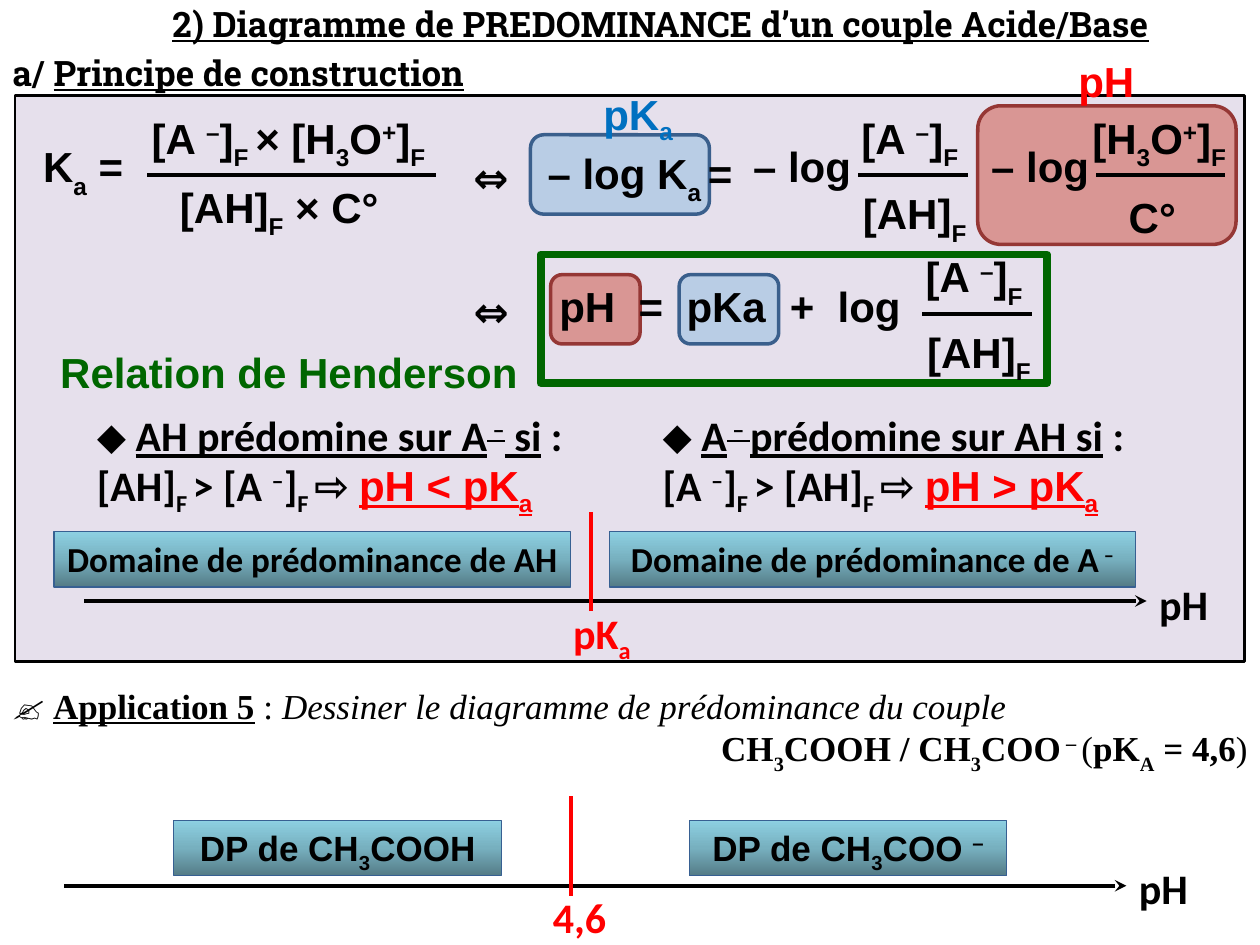
from copy import deepcopy
from typing import NamedTuple

from lxml.etree import SubElement
from pptx import Presentation
from pptx.dml.color import RGBColor
from pptx.enum.shapes import MSO_CONNECTOR, MSO_SHAPE
from pptx.enum.text import MSO_ANCHOR, MSO_AUTO_SIZE, PP_ALIGN
from pptx.oxml.ns import qn
from pptx.util import Inches, Pt

COLUMNS, ROWS = 100, 75
CELL = Inches(0.1)

BLACK = RGBColor(0x00, 0x00, 0x00)
RED = RGBColor(0xFF, 0x00, 0x00)
BLUE = RGBColor(0x00, 0x70, 0xC0)
GREEN = RGBColor(0x00, 0x66, 0x00)
NAVY = RGBColor(0x00, 0x20, 0x60)
LILAC = RGBColor(0xE6, 0xE0, 0xEC)
PALE_BLUE = RGBColor(0xB9, 0xCD, 0xE5)
PALE_BLUE_EDGE = RGBColor(0x3A, 0x5F, 0x8C)
ROSE = RGBColor(0xD9, 0x96, 0x94)
ROSE_EDGE = RGBColor(0x95, 0x37, 0x35)
LABEL_EDGE = RGBColor(0x37, 0x60, 0x92)
LABEL_STOPS = (
    (0, RGBColor(0x54, 0x7B, 0x86)),
    (0.5, RGBColor(0x77, 0xB0, 0xBF)),
    (1, RGBColor(0x8D, 0xD0, 0xE2)),
)

BASE_ION = "[A |^–|]|_F"
ACID = "[AH]|_F"
HYDRONIUM = "[H|_3|O|^+|]|_F"


class Area(NamedTuple):
    """Left, top, width and height in grid cells."""
    left: float
    top: float
    width: float
    height: float


class Panel(NamedTuple):
    """A filled and outlined shape."""
    kind: MSO_SHAPE
    area: Area
    fill: RGBColor | None
    edge: RGBColor
    weight: float


class Formula(NamedTuple):
    """A single-line text with its format."""
    text: str
    area: Area
    form: dict


class Span(NamedTuple):
    """Marked-up text with the format that differs from its box."""
    text: str
    form: dict


class Label(NamedTuple):
    """A predominance domain above the axis."""
    text: str
    left: float
    width: float


class Axis(NamedTuple):
    """A pH axis with its limit and its two domains."""
    left: float
    level: float
    limit: str
    limit_width: float
    label_rise: float
    font: str
    labels: tuple


def cells(*values: float) -> list[int]:
    """Turn grid cells into slide lengths."""
    return [round(value * CELL) for value in values]


def write_spans(para, text: str, *, size=24, font="Arial", color=BLACK, bold=True,
                italic=False, underline=False, drop=30) -> None:
    """Write pieces split by bars, where _ lowers and ^ raises a piece."""
    for piece in text.split("|"):
        span = para.add_run()
        shift = {"_": -drop, "^": 30}.get(piece[0], 0)
        span.text = piece[1:] if shift else piece
        span.font.size, span.font.name = Pt(size), font
        span.font.bold, span.font.italic, span.font.underline = bold, italic, underline
        span.font.color.rgb = color
        if shift:
            span.font._element.set("baseline", str(shift * 1000))


def fill_text(box, *paragraphs, align=PP_ALIGN.LEFT, wrap=False,
              anchor=MSO_ANCHOR.TOP, tabs=(), **form) -> None:
    """Fill a box with paragraphs, each a string or a tuple of spans."""
    frame = box.text_frame
    frame.word_wrap, frame.vertical_anchor = wrap, anchor
    frame.auto_size = MSO_AUTO_SIZE.SHAPE_TO_FIT_TEXT
    aligns = align if isinstance(align, tuple) else (align,) * len(paragraphs)
    for index, (content, side) in enumerate(zip(paragraphs, aligns)):
        para = frame.add_paragraph() if index else frame.paragraphs[0]
        para.alignment = side
        if tabs:
            stops = SubElement(para._p.get_or_add_pPr(), qn("a:tabLst"))
            for stop in cells(*tabs):
                SubElement(stops, qn("a:tab"), pos=str(stop), algn="l")
        spans = (Span(content, {}),) if isinstance(content, str) else content
        for span in spans:
            write_spans(para, span.text, **{**form, **span.form})


def add_text(page, area: Area, *paragraphs, **form) -> None:
    """Add a text box."""
    fill_text(page.shapes.add_textbox(*cells(*area)), *paragraphs, **form)


def add_panel(page, panel: Panel):
    """Add a preset shape."""
    box = page.shapes.add_shape(panel.kind, *cells(*panel.area))
    box.shadow.inherit = False
    if panel.fill is None:
        box.fill.background()
    else:
        box.fill.solid()
        box.fill.fore_color.rgb = panel.fill
    box.line.color.rgb, box.line.width = panel.edge, Pt(panel.weight)
    return box


def add_line(page, start: tuple, end: tuple, color=BLACK, arrow=False) -> None:
    """Add a straight line, with an arrowhead at its start on request."""
    line = page.shapes.add_connector(MSO_CONNECTOR.STRAIGHT, *cells(*start, *end))
    line.line.color.rgb, line.line.width = color, Pt(2.25)
    if arrow:
        SubElement(line.line._get_or_add_ln(), qn("a:headEnd"), type="stealth")
    SubElement(line._element.spPr, qn("a:effectLst"))


def add_label(page, area: Area, text: str, font: str) -> None:
    """Add a domain label with a vertical gradient."""
    box = add_panel(page, Panel(MSO_SHAPE.RECTANGLE, area, LILAC, LABEL_EDGE, 0.75))
    box.fill.gradient()
    box.fill.gradient_angle = 90
    first = box.fill.gradient_stops[0]._gs
    first.addnext(deepcopy(first))
    for stop, (position, color) in zip(box.fill.gradient_stops, LABEL_STOPS):
        stop.position, stop.color.rgb = position, color
    fill_text(box, text, align=PP_ALIGN.CENTER, wrap=True, size=20, font=font, drop=25)


def add_axis(page, axis: Axis) -> None:
    """Add a pH axis, its red limit and its domain labels."""
    left, level = axis.left, axis.level
    add_line(page, (left + 84.3, level), (left, level), arrow=True)
    add_line(page, (left + 40.2, level + 0.8), (left + 40.2, level - 7.1), RED)
    add_text(page, Area(left + 84.3, level - 2.3, 5.9, 5), "pH", font="Calibri")
    add_text(page, Area(left + 37.8, level, axis.limit_width, 5), axis.limit,
             font="Calibri", color=RED, drop=25)
    for label in axis.labels:
        area = Area(label.left, level - axis.label_rise, label.width, 4.4)
        add_label(page, area, label.text, axis.font)


def add_condition(page, area: Area, title: str, relation: str, result: str) -> None:
    """Add the condition under which one species predominates."""
    add_text(page, area,
             (Span("⬥ ", {"bold": False}), Span(title, {"underline": True}), Span(" :", {})),
             (Span(relation, {}), Span(" ", {"size": 20, "font": "Arial", "color": NAVY}),
              Span(result, {"font": "Arial", "color": RED, "underline": True})),
             font="Calibri", wrap=True, drop=25)


CENTERED = {"align": PP_ALIGN.CENTER}
HEADING = {"size": 20, "font": "Roboto Slab", "align": PP_ALIGN.JUSTIFY}
ARROW = {"font": "Calibri", "wrap": True}

PANELS = (
    Panel(MSO_SHAPE.RECTANGLE, Area(1.2, 7.6, 97.6, 44.9), LILAC, BLACK, 1.5),
    Panel(MSO_SHAPE.ROUNDED_RECTANGLE, Area(53.9, 21.8, 7.9, 5.5), PALE_BLUE, PALE_BLUE_EDGE, 2),
    Panel(MSO_SHAPE.ROUNDED_RECTANGLE, Area(43.7, 21.8, 7.1, 5.5), ROSE, ROSE_EDGE, 2),
    Panel(MSO_SHAPE.ROUNDED_RECTANGLE, Area(42.1, 10.7, 14.2, 6.3), PALE_BLUE, PALE_BLUE_EDGE, 2),
    Panel(MSO_SHAPE.ROUNDED_RECTANGLE, Area(77.6, 8.4, 20.5, 11), ROSE, ROSE_EDGE, 2),
    Panel(MSO_SHAPE.RECTANGLE, Area(42.9, 20.2, 40.2, 10.2), None, GREEN, 4.5),
)
FORMULAS = (
    Formula("2) Diagramme de PREDOMINANCE d’un couple Acide/Base",
            Area(12.7, -0.3, 87.5, 4.4), {**HEADING, "underline": True}),
    Formula("K|_a| =", Area(2.3, 10.7, 8.6, 5), CENTERED),
    Formula(f"[A |^–|]|_F |× {HYDRONIUM}", Area(10.6, 8.4, 24.6, 5), CENTERED),
    Formula(f"{ACID}| × C°", Area(13.3, 13.9, 17.8, 5), {}),
    Formula("⇔", Area(36.6, 11.5, 8.7, 5), ARROW),
    Formula("– log K|_a |=", Area(42.1, 11.2, 17.4, 5), CENTERED),
    Formula("– log", Area(58.7, 10.7, 9.9, 5), CENTERED),
    Formula("– log", Area(77.6, 10.7, 9.9, 5), CENTERED),
    Formula(HYDRONIUM, Area(85.4, 8.4, 13.2, 5), CENTERED),
    Formula("C°", Area(88.6, 14.7, 5.8, 5), {}),
    Formula("⇔", Area(36.6, 22.2, 7.1, 5), ARROW),
    Formula("pH\t=\tpKa\t+\tlog", Area(43.4, 21.8, 30.2, 5),
            {"wrap": True, "tabs": (6.3, 10.1, 18.3, 22.1)}),
    Formula("pH", Area(84.6, 3.9, 6.5, 5), {"color": RED}),
    Formula("pK|_a", Area(46.9, 6.5, 7.8, 5), {"color": BLUE, "drop": 25}),
    Formula("Relation de Henderson", Area(3.8, 27, 38.7, 5), {"color": GREEN}),
)
AXES = (
    Axis(6.7, 47.7, "pK|_a", 6.7, 5.5, "Calibri", (
        Label("Domaine de prédominance de AH", 4.3, 41),
        Label("Domaine de prédominance de A|^ –", 48.4, 41.7))),
    Axis(5.1, 70.3, "4,6", 6.3, 5.2, "Arial", (
        Label("DP de CH|_3|COOH", 13.8, 26),
        Label("DP de CH|_3|COO |^–", 54.7, 25.2))),
)


def main() -> None:
    """Build the slide and save it."""
    deck = Presentation()
    deck.slide_width, deck.slide_height = cells(COLUMNS, ROWS)
    page = deck.slides.add_slide(deck.slide_layouts[6])
    for panel in PANELS:
        add_panel(page, panel)
    for formula in FORMULAS:
        add_text(page, formula.area, formula.text, **formula.form)
    add_text(page, Area(0, 3.6, 42.5, 4.4),
             (Span("a/ ", {}), Span("Principe de construction", {"underline": True})), **HEADING)
    for left, top in ((67.3, 8.4), (72.4, 19.4)):
        add_text(page, Area(left, top, 9.8, 5), BASE_ION, **CENTERED)
        add_line(page, (left + 9.5, top + 5.5), (left + 0.8, top + 5.5))
        add_text(page, Area(left + 0.2, top + 6, 10.5, 5), ACID)
    for left, right in ((11.7, 34.6), (87, 97.2)):
        add_line(page, (right, 13.9), (left, 13.9))
    add_condition(page, Area(6.7, 32, 39.4, 9.1), "AH prédomine sur A|^ –| si",
                  "[AH]|_F |> [A |^–|]|_F |⇨", "pH < pK|_a")
    add_condition(page, Area(51.6, 32, 40.9, 9.1), "A|^ – |prédomine sur AH si",
                  "[A |^–|]|_F |> [AH]|_F |⇨", "pH > pK|_a")
    for axis in AXES:
        add_axis(page, axis)
    add_text(page, Area(0, 54.1, 100, 7.7),
             (Span("✍ ", {}), Span("Application 5", {"underline": True}),
              Span(" : ", {"bold": False}),
              Span("Dessiner le diagramme de prédominance du couple",
                   {"bold": False, "italic": True})),
             (Span("CH|_3|COOH / CH|_3|COO|^ – ", {}), Span("(", {"bold": False}),
              Span("pK|_A| = 4,6", {}), Span(")", {"bold": False})),
             align=(PP_ALIGN.JUSTIFY, PP_ALIGN.RIGHT), anchor=MSO_ANCHOR.MIDDLE,
             wrap=True, size=20, font="Times New Roman")
    deck.save("out.pptx")


if __name__ == "__main__":
    main()
